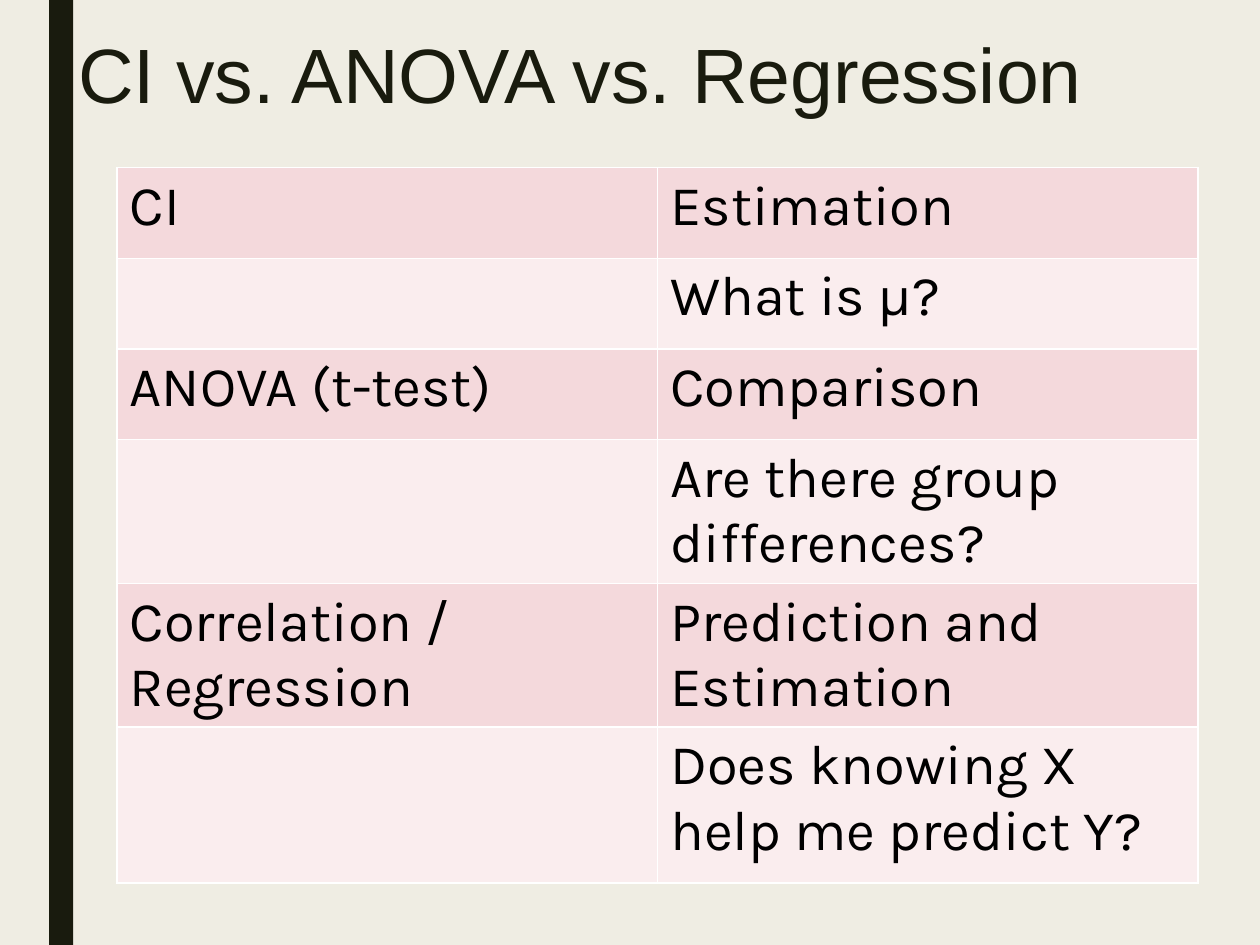
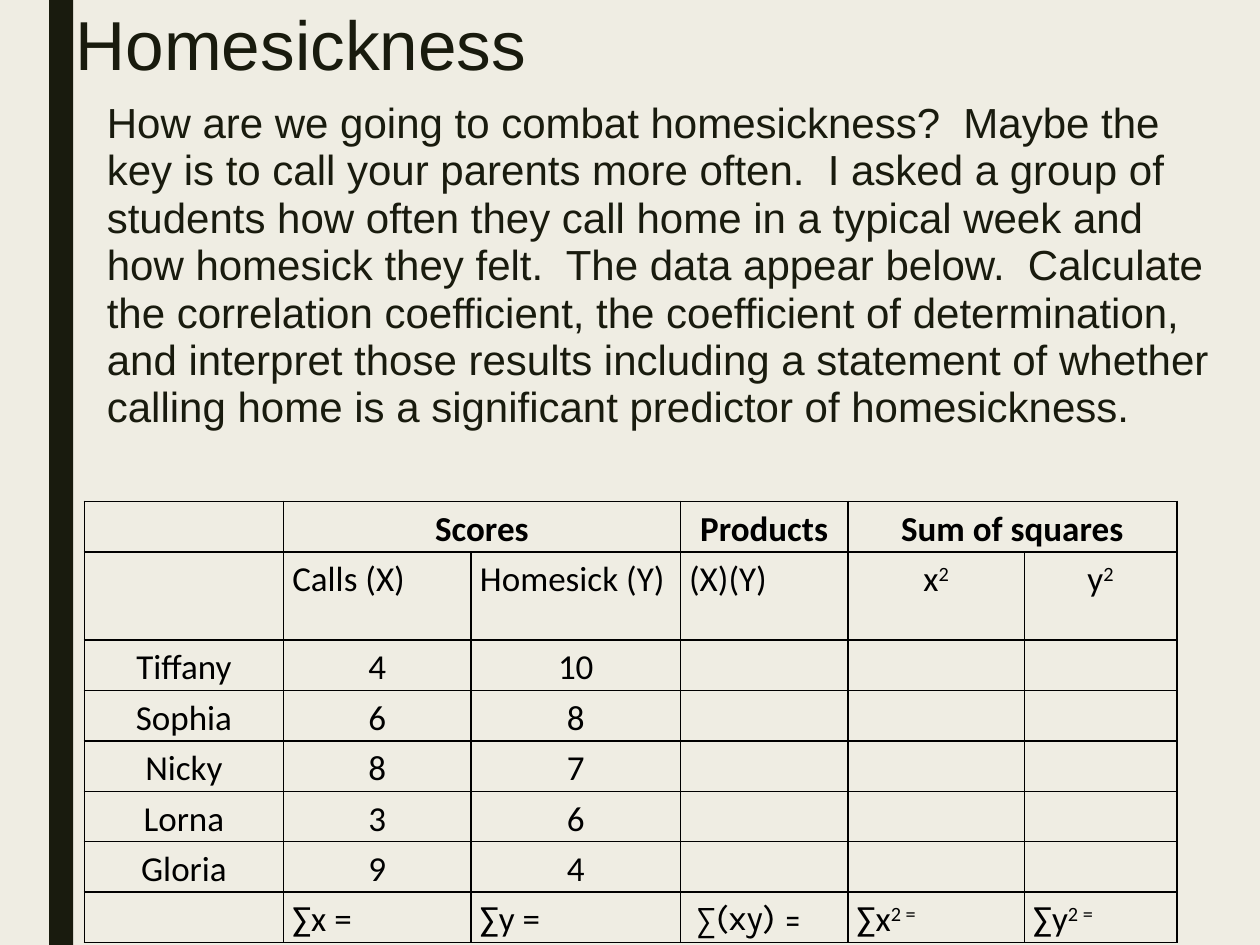
from lxml import etree
from pptx import Presentation
from pptx.dml.color import RGBColor
from pptx.enum import shapes, text
from pptx.oxml import ns
from pptx.util import Inches, Pt

CREAM = RGBColor(0xEF, 0xED, 0xE3)
DARK = RGBColor(0x19, 0x1B, 0x0E)
BLACK = RGBColor(0x00, 0x00, 0x00)
WHITE = RGBColor(0xFF, 0xFF, 0xFF)
ROSE = RGBColor(0xF4, 0xD9, 0xDC)
PALE_ROSE = RGBColor(0xFA, 0xED, 0xEE)

TITLES = [
    ("CI vs. ANOVA vs. Regression", (0.52, 0.25, 8.55, 1.53), 44),
    ("Homesickness", (0.5, 0.04, 9, 0.45), 39.6),
]
METHODS = [
    ("CI", "Estimation"),
    ("", "What is μ?"),
    ("ANOVA (t-test)", "Comparison"),
    ("", "Are there group differences?"),
    ("Correlation / Regression", "Prediction and Estimation"),
    ("", "Does knowing X help me predict Y?"),
]
QUESTION = (
    "How are we going to combat homesickness?  Maybe the key is to call your parents "
    "more often.  I asked a group of students how often they call home in a typical week "
    "and how homesick they felt.  The data appear below.  Calculate the correlation "
    "coefficient, the coefficient of determination, and interpret those results including "
    "a statement of whether calling home is a significant predictor of homesickness."
)
# A caret marks the start of a superscript.
SCORES = [
    ("", "Scores", "", "Products", "Sum of squares", ""),
    ("", "Calls (X)", "Homesick (Y)", "(X)(Y)", "x^2", "y^2"),
    ("Tiffany", "4", "10", "", "", ""),
    ("Sophia", "6", "8", "", "", ""),
    ("Nicky", "8", "7", "", "", ""),
    ("Lorna", "3", "6", "", "", ""),
    ("Gloria", "9", "4", "", "", ""),
    ("", "∑x =", "∑y =", "∑(xy) =", "∑x^2 =", "∑y^2 ="),
]


def add_run(paragraph, words, color, **formats):
    run = paragraph.add_run()
    run.text = words
    run.font.color.rgb = color
    for name, value in formats.items():
        setattr(run.font, name, value)
    return run


def add_grid(slide, left, top, widths, heights, border_color):
    """Add an unbanded table whose cells all have 1 pt borders."""
    frame = slide.shapes.add_table(
        len(heights), len(widths), Inches(left), Inches(top),
        Inches(sum(widths)), Inches(sum(heights)))
    table = frame.table
    table.first_row = table.horz_banding = False
    for column, width in zip(table.columns, widths):
        column.width = Inches(width)
    for row, height in zip(table.rows, heights):
        row.height = Inches(height)
    for cell in table.iter_cells():
        properties = cell._tc.get_or_add_tcPr()
        for side in ("lnL", "lnR", "lnT", "lnB"):
            line = etree.SubElement(properties, ns.qn(f"a:{side}"), w=str(Pt(1)))
            fill = etree.SubElement(line, ns.qn("a:solidFill"))
            etree.SubElement(fill, ns.qn("a:srgbClr"), val=str(border_color))
    return table


presentation = Presentation()
presentation.slide_width = Inches(10)
presentation.slide_height = Inches(7.5)
master = presentation.slide_master
master.background.fill.solid()
master.background.fill.fore_color.rgb = CREAM

# Titles
for title, position, size in TITLES:
    slide = presentation.slides.add_slide(presentation.slide_layouts[5])
    shape = slide.shapes.title
    shape.left, shape.top, shape.width, shape.height = map(Inches, position)
    frame = shape.text_frame
    frame.word_wrap = True
    frame.auto_size = text.MSO_AUTO_SIZE.NONE
    frame.vertical_anchor = text.MSO_ANCHOR.TOP
    paragraph = frame.paragraphs[0]
    paragraph.alignment = text.PP_ALIGN.LEFT
    paragraph.line_spacing = 0.89
    add_run(paragraph, title, DARK, name="Arial", size=Pt(size))
methods_slide, homesickness_slide = presentation.slides

# The side band belongs to the master, so every slide shows it
band = methods_slide.shapes.add_shape(
    shapes.MSO_SHAPE.RECTANGLE, Inches(0.39), 0, Inches(0.19), presentation.slide_height)
band.shadow.inherit = False
band.fill.solid()
band.fill.fore_color.rgb = DARK
band.line.fill.background()
master.shapes._spTree.append(band._element)

# Methods and the questions they answer
methods_table = add_grid(methods_slide, 0.93, 1.33, [4.29] * 2,
                         [0.72] * 3 + [1.09] * 2 + [1.24], WHITE)
for row, entries in enumerate(METHODS):
    for column, entry in enumerate(entries):
        cell = methods_table.cell(row, column)
        cell.fill.solid()
        cell.fill.fore_color.rgb = PALE_ROSE if row % 2 else ROSE
        if entry:
            add_run(cell.text_frame.paragraphs[0], entry, BLACK, name="Karla", size=Pt(32))

# Homesickness exercise
question_box = homesickness_slide.shapes.add_textbox(
    Inches(0.75), Inches(0.75), Inches(9), Inches(3))
question_box.text_frame.word_wrap = True
paragraph = question_box.text_frame.paragraphs[0]
for name, value in {"line_spacing": 0.94, "space_before": Pt(10), "space_after": Pt(2)}.items():
    setattr(paragraph, name, value)
add_run(paragraph, QUESTION, DARK, name="Arial", size=Pt(24))

scores_table = add_grid(homesickness_slide, 0.67, 3.98, [1.58, 1.49, 1.66, 1.33, 1.4, 1.21],
                        [0.4, 0.7] + [0.4] * 6, BLACK)
for first in (1, 4):
    scores_table.cell(0, first).merge(scores_table.cell(0, first + 1))
last_row = len(SCORES) - 1
for row, entries in enumerate(SCORES):
    for column, entry in enumerate(entries):
        cell = scores_table.cell(row, column)
        cell.fill.background()
        cell.margin_left = cell.margin_right = Inches(0.07)
        cell.margin_top = cell.margin_bottom = 0
        if not entry:
            continue
        is_product_sum = (row, column) == (last_row, 3)
        if is_product_sum:
            cell.margin_left = Inches(0.13)
        left_aligned = row == last_row or (row == 1 and column < 4)
        paragraph = cell.text_frame.paragraphs[0]
        paragraph.alignment = text.PP_ALIGN.LEFT if left_aligned else text.PP_ALIGN.CENTER
        paragraph.line_spacing = 1.15
        for part, words in enumerate(entry.split("^")):
            run = add_run(paragraph, words, BLACK, size=Pt(20), bold=row == 0,
                          name="Karla" if is_product_sum else "Calibri")
            if part:
                run.font._element.set("baseline", "30000")

presentation.save("out.pptx")
